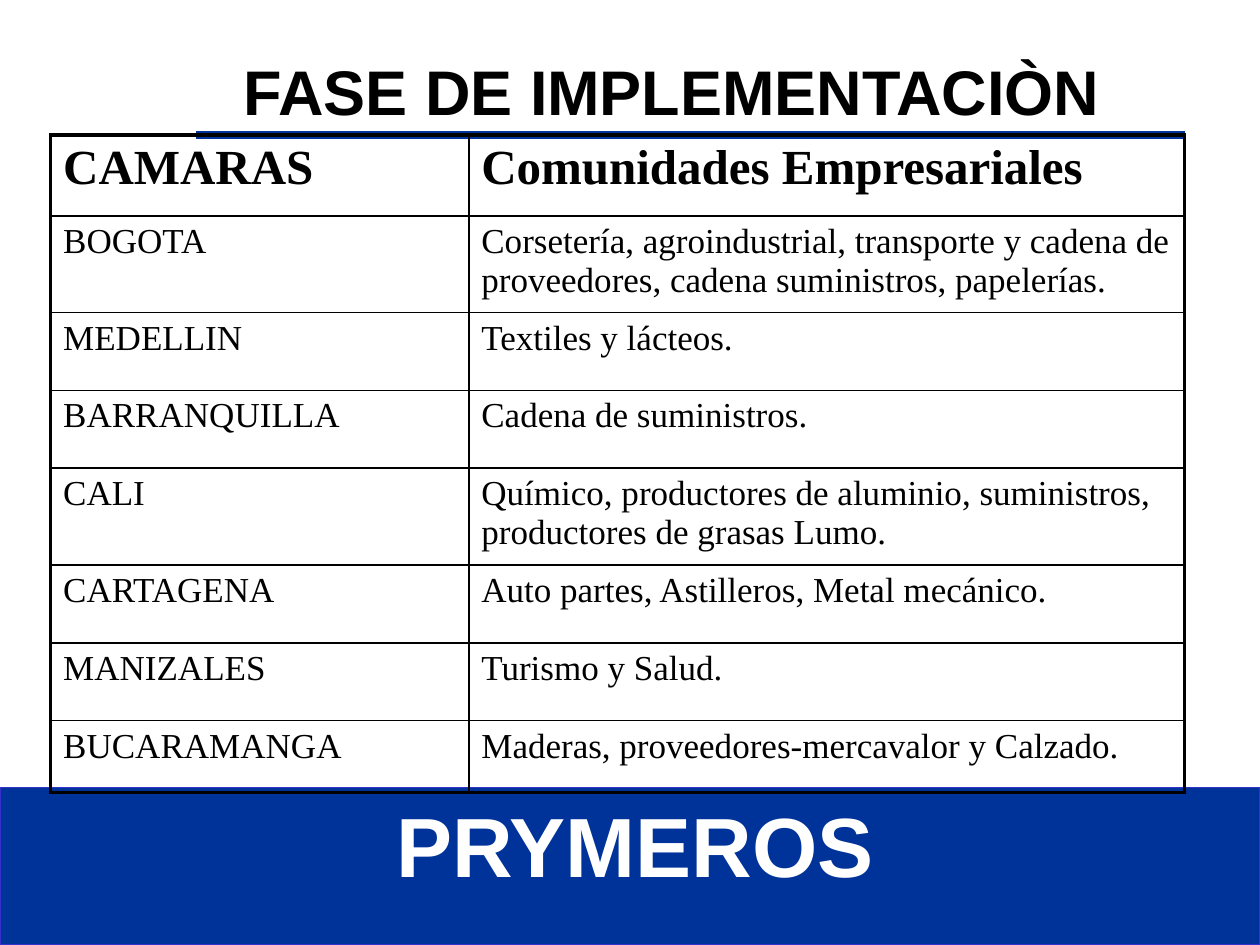
from lxml.etree import SubElement
from pptx import Presentation
from pptx.dml.color import RGBColor
from pptx.enum.shapes import MSO_CONNECTOR, MSO_SHAPE
from pptx.enum.text import MSO_ANCHOR, MSO_AUTO_SIZE, PP_ALIGN
from pptx.oxml.ns import qn
from pptx.util import Cm, Pt

BLACK = RGBColor(0x00, 0x00, 0x00)
WHITE = RGBColor(0xFF, 0xFF, 0xFF)
NAVY = RGBColor(0x00, 0x33, 0x99)
VIOLET = RGBColor(0x33, 0x33, 0xCC)

CHAMBERS = [
    ("CAMARAS", "Comunidades Empresariales"),
    ("BOGOTA", "Corsetería, agroindustrial, transporte y cadena de proveedores, "
               "cadena suministros, papelerías."),
    ("MEDELLIN", "Textiles y lácteos."),
    ("BARRANQUILLA", "Cadena de suministros."),
    ("CALI", "Químico, productores de aluminio, suministros, "
             "productores de grasas Lumo."),
    ("CARTAGENA", "Auto partes, Astilleros, Metal mecánico."),
    ("MANIZALES", "Turismo y Salud."),
    ("BUCARAMANGA", "Maderas, proveedores-mercavalor y Calzado."),
]
ROW_HEIGHTS = [1.63, 1.94, 1.57, 1.57, 1.94, 1.57, 1.57, 1.45]
COLUMN_WIDTHS = [8.43, 14.43]


def add_text(paragraph, text, size, font_name, color, bold):
    run = paragraph.add_run()
    run.text = text
    run.font.size = Pt(size)
    run.font.name = font_name
    run.font.bold = bold
    run.font.color.rgb = color


def set_border(cell, side, width):
    """Draw one side (L, R, T or B) of a cell as a solid black line."""
    properties = cell._tc.get_or_add_tcPr()
    border = SubElement(properties, qn(f"a:ln{side}"), w=str(Pt(width)))
    fill = SubElement(border, qn("a:solidFill"))
    SubElement(fill, qn("a:srgbClr"), val=str(BLACK))


presentation = Presentation()
presentation.slide_width = Cm(25.4)
presentation.slide_height = Cm(19.05)
slide = presentation.slides.add_slide(presentation.slide_layouts[5])

# Heading and the rule under it
heading = slide.shapes.title
heading.left, heading.top = Cm(4.65), Cm(0.94)
heading.width, heading.height = Cm(17.93), Cm(1.78)
heading_frame = heading.text_frame
heading_frame.word_wrap = False
heading_frame.auto_size = MSO_AUTO_SIZE.NONE
heading_frame.vertical_anchor = MSO_ANCHOR.TOP
heading_frame.paragraphs[0].alignment = PP_ALIGN.LEFT
add_text(heading_frame.paragraphs[0], "FASE DE IMPLEMENTACIÒN", 36, "Arial", BLACK, True)

rule = slide.shapes.add_connector(
    MSO_CONNECTOR.STRAIGHT, Cm(3.96), Cm(2.72), Cm(23.88), Cm(2.72))
rule.line.color.rgb = NAVY
rule.line.width = Pt(4.5)
SubElement(rule._element.spPr, qn("a:effectLst"))

# Footer band with the programme name
band = slide.shapes.add_shape(MSO_SHAPE.RECTANGLE, 0, Cm(15.88), Cm(25.4), Cm(3.17))
band.shadow.inherit = False
band.fill.solid()
band.fill.fore_color.rgb = NAVY
band.line.color.rgb = VIOLET
band.line.width = Pt(0.75)

programme = slide.shapes.add_textbox(Cm(7.7), Cm(15.88), Cm(10.21), Cm(2.29))
programme.text_frame.word_wrap = False
programme.text_frame.paragraphs[0].alignment = PP_ALIGN.CENTER
add_text(programme.text_frame.paragraphs[0], "PRYMEROS", 48, "Arial", WHITE, True)

# Chambers and their business communities
last_row, last_column = len(CHAMBERS) - 1, len(COLUMN_WIDTHS) - 1
table = slide.shapes.add_table(
    len(CHAMBERS), len(COLUMN_WIDTHS), Cm(1.02), Cm(2.72),
    Cm(sum(COLUMN_WIDTHS)), Cm(sum(ROW_HEIGHTS))).table
table.first_row = True
table.horz_banding = False
for column, width in zip(table.columns, COLUMN_WIDTHS):
    column.width = Cm(width)

for r, entries in enumerate(CHAMBERS):
    table.rows[r].height = Cm(ROW_HEIGHTS[r])
    is_header = r == 0
    for c, entry in enumerate(entries):
        cell = table.cell(r, c)
        outer_sides = {"L": c == 0, "R": c == last_column,
                       "T": is_header, "B": r == last_row}
        for side, is_outer in outer_sides.items():
            set_border(cell, side, 2.25 if is_outer else 1)
        cell.fill.background()
        add_text(cell.text_frame.paragraphs[0], entry, 28 if is_header else 20,
                 "Times New Roman", BLACK, is_header)

presentation.save("out.pptx")
